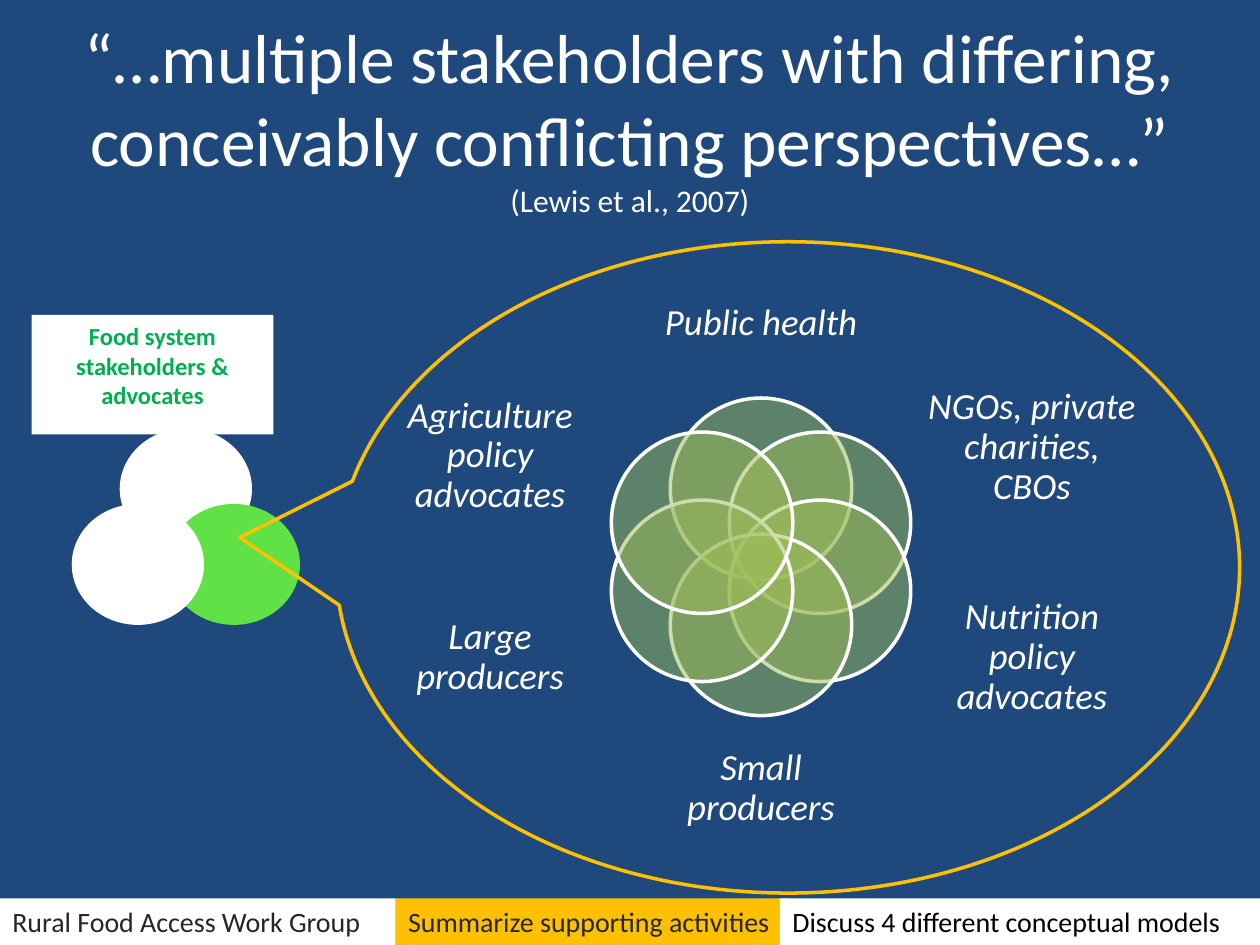
"""Build a slide on the differing perspectives of food system stakeholders."""
import math
from dataclasses import dataclass

import pptx
import pptx.dml.color
import pptx.enum.shapes
import pptx.enum.text
import pptx.oxml
import pptx.oxml.ns
import pptx.util

Pt = pptx.util.Pt
Kind = pptx.enum.shapes.MSO_SHAPE
Align = pptx.enum.text.PP_ALIGN
Anchor = pptx.enum.text.MSO_ANCHOR


@dataclass(frozen=True)
class Theme:
    font: str = "Calibri"
    navy: str = "1F497D"
    white: str = "FFFFFF"
    black: str = "000000"
    charcoal: str = "262626"
    amber: str = "FFC000"
    olive: str = "9BBB59"
    lime: str = "60E146"
    green: str = "00B050"
    title_size: float = 39.6
    citation_size: float = 18
    perspective_size: float = 21
    stakeholder_size: float = 14
    footer_size: float = 16
    outline: float = 2


THEME = Theme()

TITLE = [
    ("“…multiple stakeholders with differing, conceivably conflicting perspectives…” ", THEME.title_size),
    ("(Lewis et al., 2007)", THEME.citation_size),
]
STAKEHOLDERS = ("Food system stakeholders & advocates", (18, 180, 138.24, 68.2))
STAKEHOLDER_CIRCLES = [(68.4, 244.8, THEME.white), (95.8, 288, THEME.lime), (41, 288, THEME.white)]
STAKEHOLDER_CIRCLE_SIZE = (75.6, 69.1)
PERSPECTIVES = [
    ("Public health", (370.1, 149.8, 129.6, 70.6)),
    ("NGOs, private charities, CBOs", (528.5, 217.4, 122.4, 77)),
    ("Nutrition policy advocates", (528.5, 332.6, 122.4, 86.4)),
    ("Small producers", (370.1, 415.4, 129.6, 70.6)),
    ("Large producers", (218.9, 332.6, 122.4, 86.4)),
    ("Agriculture policy advocates", (218.9, 217.4, 122.4, 86.4)),
]
RING_CENTRE = (434.9, 318.2)
RING_RADIUS = 38.9
PETAL = 103.7
CALLOUT = (192.2, 138.2, 516.2, 372.2)
CALLOUT_TIP = (-0.607, -0.046)
FOOTER_TOP, FOOTER_HEIGHT = 513.4, 26.6
FOOTER = [
    ("Summarize supporting activities", 226.1, 224.6, THEME.amber, THEME.charcoal),
    ("Rural Food Access Work Group", 0, 226.1, THEME.white, THEME.charcoal),
    ("Discuss 4 different conceptual models", 445.7, 274.3, THEME.white, THEME.black),
]


def rgb(colour):
    return pptx.dml.color.RGBColor.from_string(colour)


def add_run(paragraph, text, size, colour, bold=False, italic=False):
    run = paragraph.add_run()
    run.text = text
    run.font.name = THEME.font
    run.font.size = Pt(size)
    run.font.color.rgb = rgb(colour)
    run.font.bold = bold
    run.font.italic = italic


def add_figure(slide, kind, box, fill=None, line=None, opacity=None):
    figure = slide.shapes.add_shape(kind, *map(Pt, box))
    figure.shadow.inherit = False
    if fill:
        figure.fill.solid()
        figure.fill.fore_color.rgb = rgb(fill)
    else:
        figure.fill.background()
    if opacity:
        colour = figure.fill._xPr.find(".//" + pptx.oxml.ns.qn("a:srgbClr"))
        colour.append(pptx.oxml.parse_xml(
            f'<a:alpha {pptx.oxml.ns.nsdecls("a")} val="{opacity * 1000}"/>'))
    if line:
        figure.line.color.rgb = rgb(line)
        figure.line.width = Pt(THEME.outline)
    else:
        figure.line.fill.background()
    return figure


def write(shape, text, size, colour, align, anchor, **style):
    frame = shape.text_frame
    frame.word_wrap = True
    frame.vertical_anchor = anchor
    paragraph = frame.paragraphs[0]
    paragraph.alignment = align
    add_run(paragraph, text, size, colour, **style)
    return frame


def add_title(slide):
    title = slide.shapes.title
    title.left, title.top, title.width, title.height = map(Pt, (36, 21.6, 648, 90))
    frame = title.text_frame
    frame.auto_size = pptx.enum.text.MSO_AUTO_SIZE.NONE
    frame.vertical_anchor = Anchor.MIDDLE
    frame.paragraphs[0].alignment = Align.CENTER
    for text, size in TITLE:
        add_run(frame.paragraphs[0], text, size, THEME.white)


def add_stakeholders(slide):
    text, box = STAKEHOLDERS
    label = add_figure(slide, Kind.RECTANGLE, box, THEME.white)
    write(label, text, THEME.stakeholder_size, THEME.green, Align.CENTER, Anchor.TOP, bold=True)
    for left, top, fill in STAKEHOLDER_CIRCLES:
        add_figure(slide, Kind.OVAL, (left, top, *STAKEHOLDER_CIRCLE_SIZE), fill)


def add_perspectives(slide):
    for index, (text, box) in enumerate(PERSPECTIVES):
        angle = math.tau * index / len(PERSPECTIVES)
        left = RING_CENTRE[0] + RING_RADIUS * math.sin(angle) - PETAL / 2
        top = RING_CENTRE[1] - RING_RADIUS * math.cos(angle) - PETAL / 2
        add_figure(slide, Kind.OVAL, (left, top, PETAL, PETAL), THEME.olive, THEME.white, opacity=50)
        label = slide.shapes.add_textbox(*map(Pt, box))
        frame = write(label, text, THEME.perspective_size, THEME.white,
                      Align.CENTER, Anchor.MIDDLE, italic=True)
        frame.margin_left = frame.margin_right = frame.margin_top = frame.margin_bottom = 0
        frame.paragraphs[0].line_spacing = 0.9
    callout = add_figure(slide, Kind.OVAL_CALLOUT, CALLOUT, line=THEME.amber)
    for index, offset in enumerate(CALLOUT_TIP):
        callout.adjustments[index] = offset


def add_footer(slide):
    for text, left, width, fill, colour in FOOTER:
        box = (left, FOOTER_TOP, width, FOOTER_HEIGHT)
        step = add_figure(slide, Kind.RECTANGLE, box, fill)
        write(step, text, THEME.footer_size, colour, Align.LEFT, Anchor.TOP)


def main():
    deck = pptx.Presentation()
    deck.slide_width, deck.slide_height = Pt(720), Pt(540)
    slide = deck.slides.add_slide(deck.slide_layouts[5])
    slide.background.fill.solid()
    slide.background.fill.fore_color.rgb = rgb(THEME.navy)
    add_stakeholders(slide)
    add_perspectives(slide)
    add_footer(slide)
    add_title(slide)
    deck.save("out.pptx")


if __name__ == "__main__":
    main()
